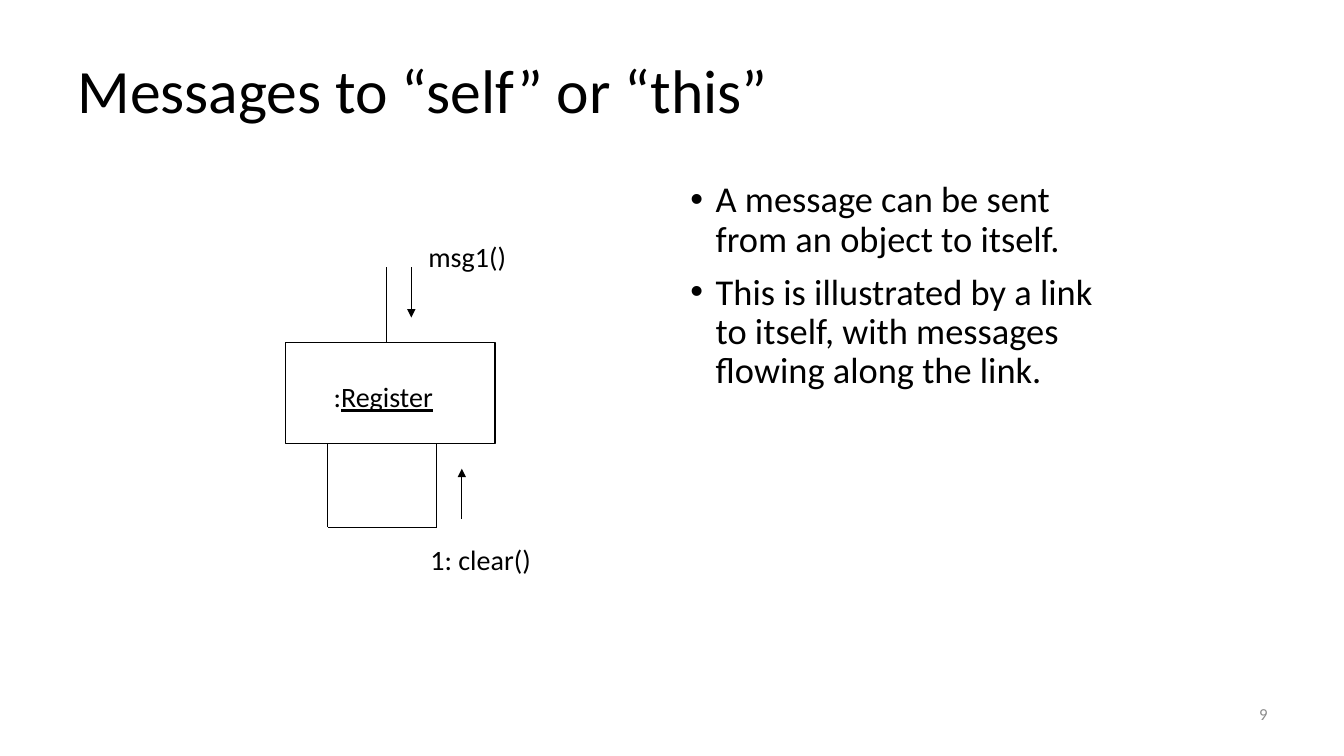
from dataclasses import dataclass

from lxml import etree
from pptx import Presentation
from pptx.dml.color import RGBColor
from pptx.enum.shapes import MSO_CONNECTOR, MSO_SHAPE
from pptx.enum.text import MSO_ANCHOR, MSO_AUTO_SIZE, PP_ALIGN
from pptx.oxml.ns import qn
from pptx.util import Inches, Pt

STRAIGHT = MSO_CONNECTOR.STRAIGHT
RECTANGLE = MSO_SHAPE.RECTANGLE
TOP, MIDDLE = MSO_ANCHOR.TOP, MSO_ANCHOR.MIDDLE
LEFT, RIGHT = PP_ALIGN.LEFT, PP_ALIGN.RIGHT
FIT_SHAPE = MSO_AUTO_SIZE.SHAPE_TO_FIT_TEXT


@dataclass(frozen=True)
class Theme:
    font: str = "Calibri"
    ink: RGBColor = RGBColor(0x00, 0x00, 0x00)
    paper: RGBColor = RGBColor(0xFF, 0xFF, 0xFF)
    muted: RGBColor = RGBColor(0x8C, 0x8C, 0x8C)
    title_size: int = 44
    body_size: int = 26
    label_size: int = 20
    number_size: int = 12
    line_width: float = 0.75


THEME = Theme()


def style_paragraph(paragraph, size, color=THEME.ink, align=LEFT):
    paragraph.alignment = align
    paragraph.font.name = THEME.font
    paragraph.font.size = Pt(size)
    paragraph.font.color.rgb = color


def add_text_frame(slide, left, top, width, height, anchor=TOP):
    box = slide.shapes.add_textbox(
        Inches(left), Inches(top), Inches(width), Inches(height))
    frame = box.text_frame
    frame.word_wrap = True
    frame.vertical_anchor = anchor
    return frame


def add_title(slide, text):
    frame = add_text_frame(slide, 0.67, 0.3, 12, 1.25, MIDDLE)
    paragraph = frame.paragraphs[0]
    paragraph.text = text
    paragraph.line_spacing = 0.9
    style_paragraph(paragraph, THEME.title_size)


def add_bullets(slide, items):
    frame = add_text_frame(slide, 6.75, 1.75, 4.41, 4.95)
    for index, item in enumerate(items):
        paragraph = frame.add_paragraph() if index else frame.paragraphs[0]
        paragraph.text = item
        paragraph.line_spacing = 0.9
        paragraph.space_before = Pt(10 if index else 0)
        properties = paragraph._p.get_or_add_pPr()
        properties.set("marL", str(Inches(0.25)))
        properties.set("indent", str(Inches(-0.25)))
        etree.SubElement(properties, qn("a:buFont"), typeface="Arial")
        etree.SubElement(properties, qn("a:buChar"), char="•")
        style_paragraph(paragraph, THEME.body_size)


def add_label(slide, left, top, width, text, underlined=""):
    frame = add_text_frame(slide, left, top, width, 0.44)
    frame.word_wrap = False
    frame.auto_size = FIT_SHAPE
    paragraph = frame.paragraphs[0]
    paragraph.add_run().text = text
    if underlined:
        run = paragraph.add_run()
        run.text = underlined
        run.font.underline = True
    style_paragraph(paragraph, THEME.label_size)


def add_page_number(slide, number):
    frame = add_text_frame(slide, 9.56, 6.83, 3.11, 0.5, MIDDLE)
    paragraph = frame.paragraphs[0]
    paragraph.text = number
    style_paragraph(paragraph, THEME.number_size, THEME.muted, RIGHT)


def add_object_box(slide, left, top, width, height):
    shape = slide.shapes.add_shape(
        RECTANGLE, Inches(left), Inches(top), Inches(width), Inches(height))
    shape.shadow.inherit = False
    shape.fill.solid()
    shape.fill.fore_color.rgb = THEME.paper
    shape.line.color.rgb = THEME.ink
    shape.line.width = Pt(THEME.line_width)


def add_line(slide, start, end, arrow=False):
    connector = slide.shapes.add_connector(
        STRAIGHT, *(Inches(value) for value in (*start, *end)))
    connector.line.color.rgb = THEME.ink
    connector.line.width = Pt(THEME.line_width)
    if arrow:
        etree.SubElement(
            connector.line._get_or_add_ln(), qn("a:tailEnd"), type="triangle")
    etree.SubElement(connector._element.spPr, qn("a:effectLst"))


def add_register_diagram(slide):
    box_top, box_height = 3.4, 1
    box_bottom = box_top + box_height
    loop_left, loop_right, loop_bottom = 3.25, 4.33, 5.23
    link_top = 2.65

    add_object_box(slide, 2.83, box_top, 2.08, box_height)
    add_label(slide, 3.21, 3.72, 1.2, ":", "Register")

    loop = [(loop_left, box_bottom), (loop_left, loop_bottom),
            (loop_right, loop_bottom), (loop_right, box_bottom)]
    for start, end in zip(loop, loop[1:]):
        add_line(slide, start, end)
    add_line(slide, (4.58, 5.15), (4.58, 4.65), arrow=True)
    add_label(slide, 4.17, 5.33, 1.21, "1: clear()")

    add_line(slide, (3.83, link_top), (3.83, box_top))
    add_line(slide, (4.08, link_top), (4.08, 3.15), arrow=True)
    add_label(slide, 4.15, 2.33, 0.98, "msg1()")


def main():
    presentation = Presentation()
    presentation.slide_width = Inches(13.33)
    presentation.slide_height = Inches(7.5)
    slide = presentation.slides.add_slide(presentation.slide_layouts[6])
    add_title(slide, "Messages to “self” or “this”")
    add_bullets(slide, [
        "A message can be sent from an object to itself.",
        "This is illustrated by a link to itself, with messages flowing along the link.",
    ])
    add_register_diagram(slide)
    add_page_number(slide, "9")
    presentation.save("out.pptx")


if __name__ == "__main__":
    main()
